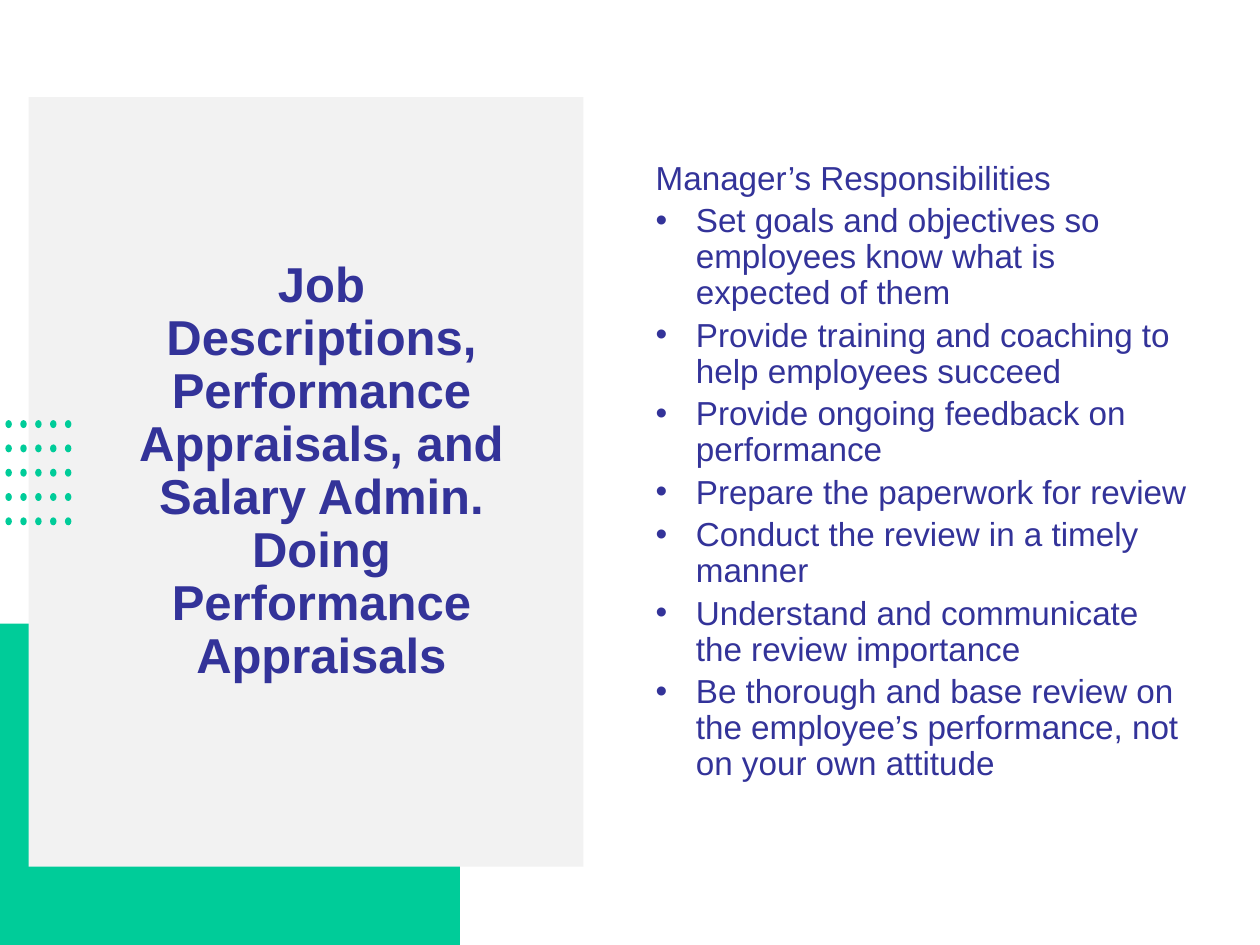
from pptx import Presentation
from pptx.dml.color import RGBColor
from pptx.enum.shapes import MSO_SHAPE as Shape
from pptx.enum.text import MSO_ANCHOR as Anchor, PP_ALIGN as Align
from pptx.oxml.ns import qn
from pptx.util import Cm, Pt
from lxml.etree import SubElement

COLORS = {"green": "00CC99", "panel": "F2F2F2", "text": "333399"}
FONT = "Arial"

deck = Presentation()
deck.slide_width, deck.slide_height = Cm(25.4), Cm(19.05)
slide = deck.slides.add_slide(deck.slide_layouts[6])


def add_filled(parent, preset, left, top, width, height, color):
    shape = parent.add_shape(preset, Cm(left), Cm(top), Cm(width), Cm(height))
    shape.shadow.inherit = False
    shape.fill.solid()
    shape.fill.fore_color.rgb = RGBColor.from_string(COLORS[color])
    shape.line.fill.background()


def add_text(left, top, width, height, lines, size, bold=False):
    frame = slide.shapes.add_textbox(Cm(left), Cm(top), Cm(width), Cm(height)).text_frame
    frame.word_wrap = True
    frame.vertical_anchor = Anchor.MIDDLE
    frame.margin_left = frame.margin_right = Cm(0.24)
    frame.margin_top = frame.margin_bottom = Cm(0.11)
    frame.text = "\n".join(lines)
    for paragraph in frame.paragraphs:
        paragraph.line_spacing = 0.9
        for run in paragraph.runs:
            run.font.name = FONT
            run.font.size = Pt(size)
            run.font.bold = bold
            run.font.color.rgb = RGBColor.from_string(COLORS["text"])
    return frame.paragraphs


# Green corner and grey title panel
add_filled(slide.shapes, Shape.RECTANGLE, 0, 12.57, 9.27, 6.48, "green")
add_filled(slide.shapes, Shape.RECTANGLE, 0.58, 1.96, 11.18, 15.51, "panel")

# Title, with a line break (\v) between its two parts
title = add_text(2.11, 3.73, 8.74, 11.58, [
    "Job Descriptions, Performance Appraisals, and Salary Admin.\v"
    "Doing Performance Appraisals",
], 28, bold=True)
title[0].alignment = Align.CENTER

# Five by five grid of dots
dots = slide.shapes.add_group_shape()
for column in range(5):
    for row in range(5):
        add_filled(dots.shapes, Shape.OVAL, 0.11 + 0.3 * column, 8.47 + 0.49 * row,
                   0.13, 0.16, "green")

# Responsibilities: a heading and its bullets
responsibilities = add_text(12.98, 2.08, 11.18, 14.88, [
    "Manager’s Responsibilities",
    "Set goals and objectives so employees know what is expected of them",
    "Provide training and coaching to help employees succeed",
    "Provide ongoing feedback on performance",
    "Prepare the paperwork for review",
    "Conduct the review in a timely manner",
    "Understand and communicate the review importance",
    "Be thorough and base review on the employee’s performance, not on your own attitude",
], 19)
for paragraph in responsibilities:
    paragraph.space_before = Pt(3.8)
for bullet in responsibilities[1:]:
    properties = bullet._p.get_or_add_pPr()
    properties.set("marL", str(Cm(0.81)))
    properties.set("indent", str(-Cm(0.81)))
    SubElement(properties, qn("a:buFont"), typeface=FONT)
    SubElement(properties, qn("a:buChar"), char="•")

deck.save("out.pptx")
